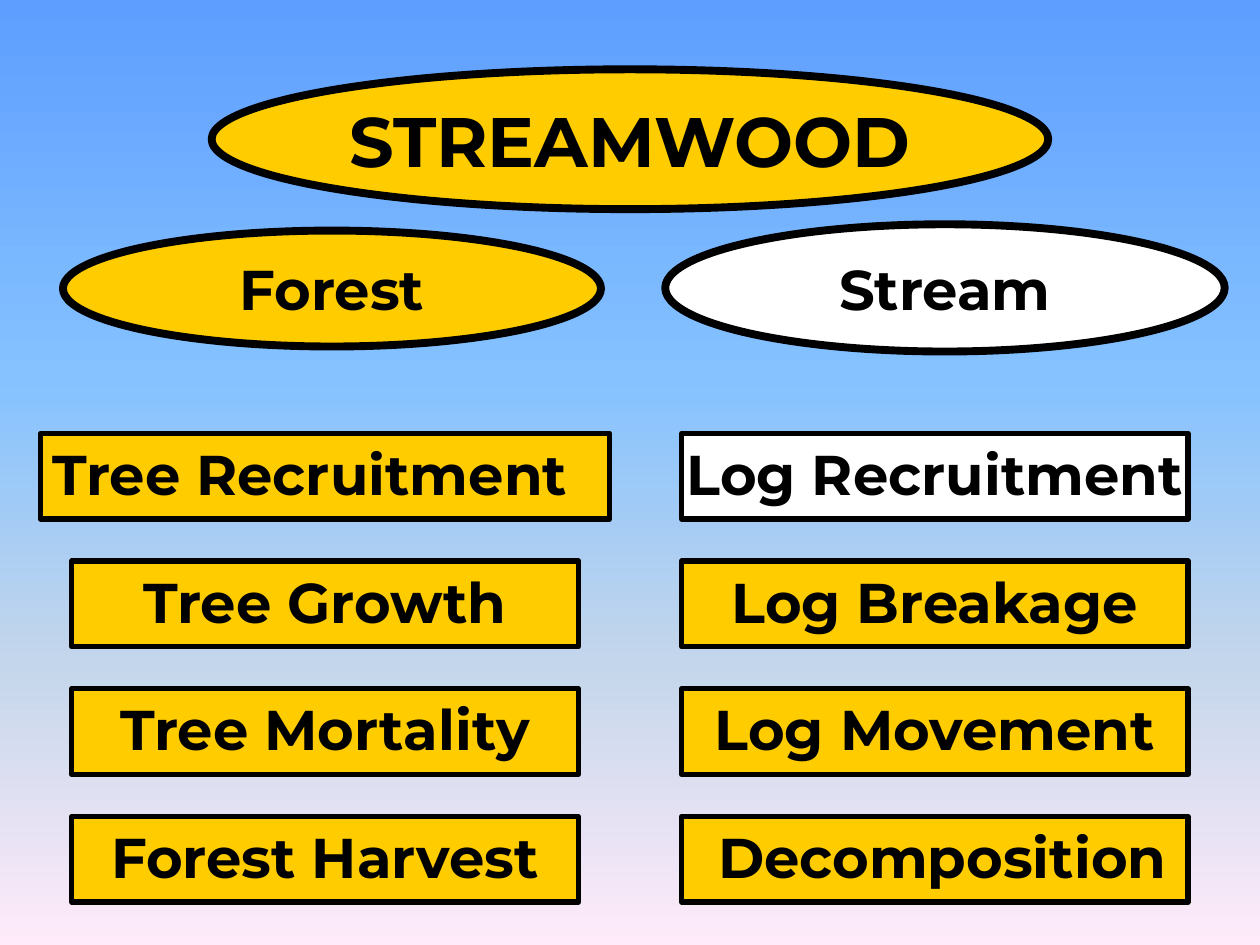
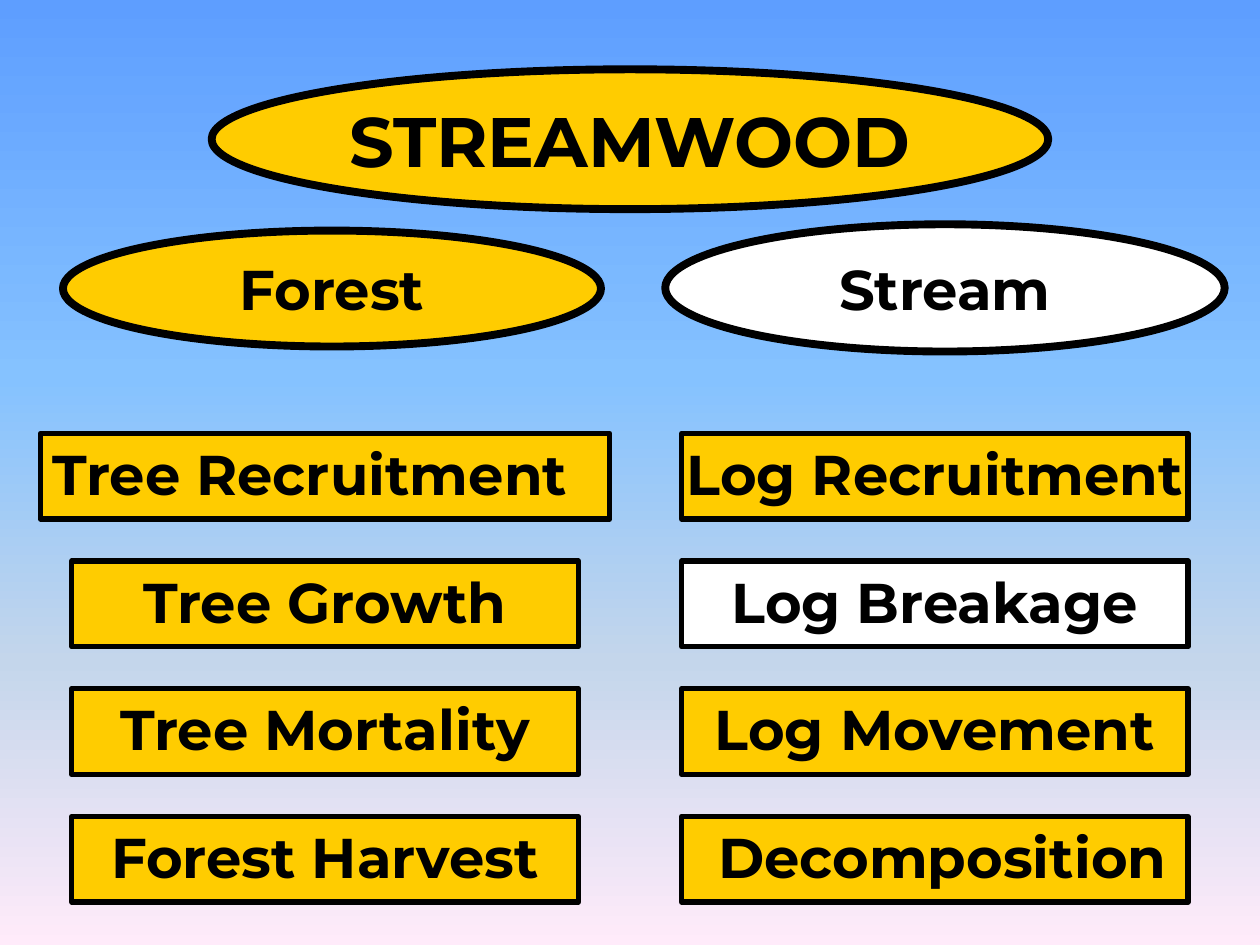
from copy import deepcopy

from pptx import Presentation
from pptx.dml.color import RGBColor
from pptx.enum.shapes import MSO_SHAPE as Preset
from pptx.enum.text import MSO_ANCHOR as Anchor, MSO_AUTO_SIZE as AutoSize, PP_ALIGN as Align
from pptx.util import Inches, Pt

COLORS = {"gold": "FFCC00", "highlight": "FFFFFF", "ink": "000000"}
SKY_STOPS = {0: "5E9EFF", 0.4: "85C2FF", 0.7: "C4D6EB", 1: "FFEBFA"}
FONT = "Montserrat"
TITLE_ONLY = 5

TITLE_BOX = (1.68, 0.55, 6.64, 1.11)
# Each model part: heading, heading box, box of its process column, processes
MODEL_PARTS = [
    ("Forest", (0.5, 1.83, 4.27, 0.92), (0.57, 3.44, 4.02, 3.72),
     ["Tree Recruitment", "Tree Growth", "Tree Mortality", "Forest Harvest"]),
    ("Stream", (5.28, 1.78, 4.44, 1.01), (5.41, 3.44, 4.02, 3.72),
     ["Log Recruitment", "Log Breakage", "Log Movement", "Decomposition"]),
]
PROCESS_HEIGHT = 0.68
SIDE_MARGIN = 0.12
EXTRA_WIDTH = {"Tree Recruitment": 0.5}
TEXT_SHIFT = {"Tree Recruitment": -0.12, "Decomposition": 0.06}
SLIDE_HIGHLIGHTS = [{"Stream", "Log Recruitment"}, {"Stream", "Log Breakage"}]


def rgb(name):
    return RGBColor.from_string(COLORS[name])


def apply(target, values):
    for name, value in values.items():
        setattr(target, name, value)


def place(shape, box):
    apply(shape, dict(zip(("left", "top", "width", "height"), map(Inches, box))))


def paint_sky(master):
    """Give every slide the vertical gradient through the master."""
    fill = master.background.fill
    fill.gradient()
    fill.gradient_angle = 270
    stop_list = master.element.xpath(".//p:bg//a:gsLst")[0]
    while len(stop_list) < len(SKY_STOPS):
        stop_list.append(deepcopy(stop_list[0]))
    for stop, (position, color) in zip(fill.gradient_stops, SKY_STOPS.items()):
        stop.position = position
        stop.color.rgb = RGBColor.from_string(color)


def write(shape, text, size, anchor=Anchor.MIDDLE, shift=0):
    """Write one bold centred line, moved sideways by shift inches."""
    frame = shape.text_frame
    apply(frame, {
        "word_wrap": False,
        "auto_size": AutoSize.NONE,
        "vertical_anchor": anchor,
        "margin_left": Inches(SIDE_MARGIN + shift),
        "margin_right": Inches(SIDE_MARGIN - shift),
        "margin_top": Inches(0.05),
        "margin_bottom": Inches(0.05),
    })
    para = frame.paragraphs[0]
    para.alignment = Align.CENTER
    span = para.add_run()
    span.text = text
    apply(span.font, {"name": FONT, "size": Pt(size), "bold": True})
    span.font.color.rgb = rgb("ink")


def add_outlined(page, preset, box, color, line_width):
    shape = page.shapes.add_shape(preset, *map(Inches, box))
    shape.shadow.inherit = False
    shape.fill.solid()
    shape.fill.fore_color.rgb = rgb(color)
    shape.line.color.rgb = rgb("ink")
    shape.line.width = Pt(line_width)
    return shape


def add_title(page, box):
    """Lay the title placeholder over its ellipse."""
    ellipse = add_outlined(page, Preset.OVAL, box, "gold", 4.5)
    title = page.shapes.title
    place(title, box)
    write(title, "STREAMWOOD", 40)
    ellipse.element.addnext(title.element)


def add_heading(page, box, text, color):
    write(add_outlined(page, Preset.OVAL, box, color, 4.5), text, 32)


def add_processes(page, box, processes, color_of):
    """Spread the process boxes evenly from the top to the bottom of box."""
    left, top, width, height = box
    pitch = (height - PROCESS_HEIGHT) / (len(processes) - 1)
    for row, process in enumerate(processes):
        extra = EXTRA_WIDTH.get(process, 0)
        process_box = (left - extra / 2, top + row * pitch, width + extra, PROCESS_HEIGHT)
        shape = add_outlined(page, Preset.RECTANGLE, process_box, color_of(process), 3)
        write(shape, process, 32, Anchor.TOP, TEXT_SHIFT.get(process, 0))


def add_model_slide(deck, highlights):
    def color_of(name):
        return "highlight" if name in highlights else "gold"

    page = deck.slides.add_slide(deck.slide_layouts[TITLE_ONLY])
    add_title(page, TITLE_BOX)
    for heading, heading_box, column_box, processes in MODEL_PARTS:
        add_heading(page, heading_box, heading, color_of(heading))
        add_processes(page, column_box, processes, color_of)


def main():
    deck = Presentation()
    apply(deck, {"slide_width": Inches(10), "slide_height": Inches(7.5)})
    paint_sky(deck.slide_master)
    for highlights in SLIDE_HIGHLIGHTS:
        add_model_slide(deck, highlights)
    deck.save("out.pptx")


if __name__ == "__main__":
    main()
